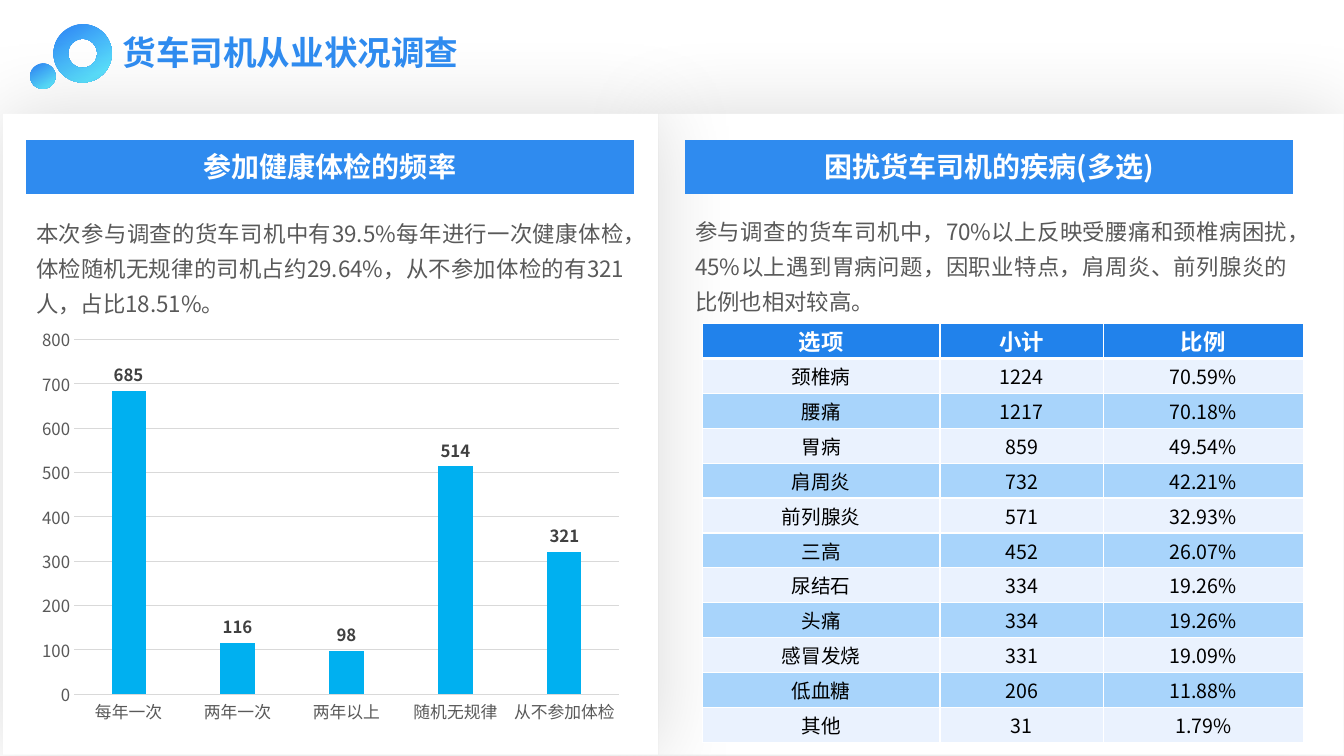
from lxml.etree import SubElement
from pptx import Presentation
from pptx.chart.data import CategoryChartData
from pptx.dml.color import RGBColor
from pptx.enum.chart import XL_CHART_TYPE as ChartType, XL_LABEL_POSITION as LabelPosition
from pptx.enum.chart import XL_TICK_MARK as TickMark
from pptx.enum.shapes import MSO_SHAPE as Preset
from pptx.enum.text import MSO_ANCHOR as Anchor, MSO_AUTO_SIZE as AutoSize, PP_ALIGN as Align
from pptx.oxml.ns import qn
from pptx.util import Cm, Pt

FONT = "Noto Sans CJK SC"
BLUE, WHITE, GREY, GRID = "2F8BEF", "FFFFFF", "595959", "D9D9D9"
HEADER_FILL, BAND_FILLS = "2182EB", ("EAF2FE", "A8D4FB")
COLUMN_STEP = 16.61

CHECKUPS = {"每年一次": 685, "两年一次": 116, "两年以上": 98, "随机无规律": 514, "从不参加体检": 321}
DISEASES = [
    ("选项", "小计", "比例"),
    ("颈椎病", "1224", "70.59%"),
    ("腰痛", "1217", "70.18%"),
    ("胃病", "859", "49.54%"),
    ("肩周炎", "732", "42.21%"),
    ("前列腺炎", "571", "32.93%"),
    ("三高", "452", "26.07%"),
    ("尿结石", "334", "19.26%"),
    ("头痛", "334", "19.26%"),
    ("感冒发烧", "331", "19.09%"),
    ("低血糖", "206", "11.88%"),
    ("其他", "31", "1.79%"),
]


def paint(color_format, color):
    color_format.rgb = RGBColor.from_string(color)


def paint_fill(fill, color):
    fill.solid()
    paint(fill.fore_color, color)


def style_font(font, size, color, bold=False):
    font.name, font.size, font.bold = FONT, Pt(size), bold
    paint(font.color, color)
    SubElement(font._rPr, qn("a:ea"), typeface=FONT)


def write(frame, text, size=16, color=GREY, bold=False, align=Align.JUSTIFY, spacing=None):
    paragraph = frame.paragraphs[0]
    paragraph.alignment = align
    if spacing:
        paragraph.line_spacing = Pt(spacing)
    run = paragraph.add_run()
    run.text = text
    style_font(run.font, size, color, bold)


def add_text(shapes, box, text, margins=True, **text_format):
    frame = shapes.add_textbox(*map(Cm, box)).text_frame
    frame.word_wrap = True
    frame.auto_size = AutoSize.SHAPE_TO_FIT_TEXT
    if not margins:
        frame.margin_left = frame.margin_right = frame.margin_top = frame.margin_bottom = 0
    write(frame, text, **text_format)


def add_shape(shapes, preset, box, color=WHITE):
    shape = shapes.add_shape(preset, *map(Cm, box))
    shape.shadow.inherit = False
    paint_fill(shape.fill, color)
    shape.line.fill.background()
    return shape


def add_panel(shapes, left, width):
    panel = add_shape(shapes, Preset.RECTANGLE, (left, 2.87, width, 16.15))
    effects = panel._element.spPr.find(qn("a:effectLst"))
    shadow = SubElement(effects, qn("a:outerShdw"), blurRad=str(Pt(60)), dist="0",
                        algn="ctr", rotWithShape="0")
    shade = SubElement(shadow, qn("a:srgbClr"), val="000000")
    SubElement(shade, qn("a:alpha"), val="15000")


def add_emblem(shapes):
    group = shapes.add_group_shape()
    for preset, left, top, size in ((Preset.DONUT, 1.35, 0.61, 1.47), (Preset.OVAL, 0.76, 1.6, 0.64)):
        ring = add_shape(group.shapes, preset, (left, top, size, size))
        ring.fill.gradient()
        ring.fill.gradient_angle = 300
        stops = ((0.12, "338FF5"), (0.82, "5ADFFC"))
        for stop, (position, color) in zip(ring.fill.gradient_stops, stops):
            stop.position = position
            paint(stop.color, color)


def add_banner(shapes, column, text):
    offset = column * COLUMN_STEP
    group = shapes.add_group_shape()
    band = add_shape(group.shapes, Preset.PARALLELOGRAM, (0.66 + offset, 3.53, 15.32, 1.37), BLUE)
    band.adjustments[0] = 0
    add_text(group.shapes, (0.53 + offset, 3.78, 15.57, 0.86), text, margins=False,
             size=20, color=WHITE, bold=True, align=Align.CENTER)


def add_borders(cell, bottom_width):
    properties = cell._tc.get_or_add_tcPr()
    for side, width in (("L", 1), ("R", 1), ("T", 1), ("B", bottom_width)):
        line = SubElement(properties, qn(f"a:ln{side}"), w=str(Pt(width)))
        SubElement(SubElement(line, qn("a:solidFill")), qn("a:srgbClr"), val=WHITE)


def add_disease_table(shapes):
    widths, row_height = (5.99, 4.11, 5.05), 0.88
    box = (17.7, 8.15, sum(widths), row_height * len(DISEASES))
    table = shapes.add_table(len(DISEASES), len(widths), *map(Cm, box)).table
    for column, width in zip(table.columns, widths):
        column.width = Cm(width)
    for index, (row, values) in enumerate(zip(table.rows, DISEASES)):
        row.height = Cm(row_height)
        header = index == 0
        for cell, value in zip(row.cells, values):
            cell.vertical_anchor = Anchor.MIDDLE
            cell.margin_top = cell.margin_bottom = Cm(0.03)
            add_borders(cell, 3 if header else 1)
            paint_fill(cell.fill, HEADER_FILL if header else BAND_FILLS[(index - 1) % 2])
            write(cell.text_frame, value, size=16 if header else 14,
                  color=WHITE if header else "000000", bold=header, align=Align.CENTER)


def style_line(line, color):
    paint_fill(line.fill, color)
    line.width = Pt(0.75)


def add_checkup_chart(shapes):
    data = CategoryChartData()
    data.categories = CHECKUPS.keys()
    data.add_series("Series 1", CHECKUPS.values())
    box = map(Cm, (0.76, 8.03, 15.14, 10.41))
    chart = shapes.add_chart(ChartType.COLUMN_CLUSTERED, *box, data).chart
    chart.has_legend = chart.has_title = False
    style_font(chart.font, 12, GREY)
    for axis in (chart.category_axis, chart.value_axis):
        axis.major_tick_mark = axis.minor_tick_mark = TickMark.NONE
        style_font(axis.tick_labels.font, 12, GREY)
    style_line(chart.category_axis.format.line, GRID)
    value_axis = chart.value_axis
    value_axis.minimum_scale, value_axis.maximum_scale, value_axis.major_unit = 0, 800, 100
    value_axis.format.line.fill.background()
    style_line(value_axis.major_gridlines.format.line, GRID)
    plot = chart.plots[0]
    plot.gap_width, plot.overlap, plot.vary_by_categories = 219, -27, False
    series = plot.series[0]
    paint_fill(series.format.fill, "00B0F0")
    labels = series.data_labels
    labels.show_value = True
    labels.position = LabelPosition.OUTSIDE_END
    style_font(labels.font, 12, "404040", bold=True)


def main():
    presentation = Presentation()
    presentation.slide_width, presentation.slide_height = Cm(33.87), Cm(19.05)
    slide = presentation.slides.add_slide(presentation.slide_layouts[6])
    shapes = slide.shapes
    add_panel(shapes, 16.59, 17.27)
    add_emblem(shapes)
    add_panel(shapes, 0.08, 16.51)
    add_banner(shapes, 0, "参加健康体检的频率")
    add_text(shapes, (0.66, 5.23, 15.32, 2.79),
             "本次参与调查的货车司机中有39.5%每年进行一次健康体检，体检随机无规律的司机占约29.64%，"
             "从不参加体检的有321人，占比18.51%。", spacing=25)
    add_disease_table(shapes)
    add_text(shapes, (17.27, 5.16, 15.44, 2.92),
             "参与调查的货车司机中，70%以上反映受腰痛和颈椎病困扰，45%以上遇到胃病问题，"
             "因职业特点，肩周炎、前列腺炎的比例也相对较高。", spacing=25)
    add_text(shapes, (2.84, 0.69, 9.37, 1.27), "货车司机从业状况调查", size=24, color=BLUE, bold=True)
    add_banner(shapes, 1, "困扰货车司机的疾病(多选)")
    add_checkup_chart(shapes)
    presentation.save("out.pptx")


if __name__ == "__main__":
    main()
